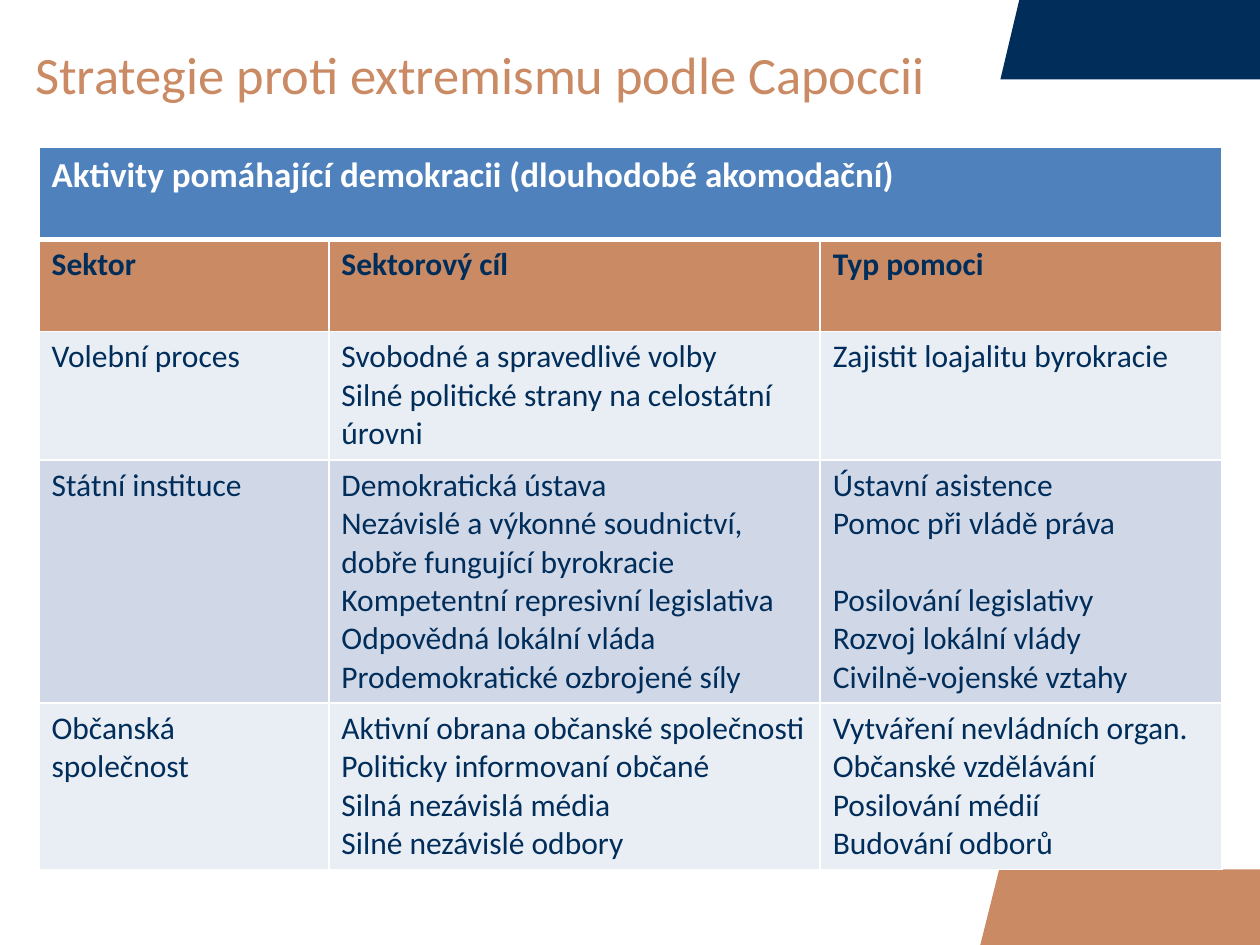
from lxml.etree import SubElement
from pptx import Presentation
from pptx.dml.color import RGBColor
from pptx.enum.text import MSO_ANCHOR
from pptx.oxml.ns import qn
from pptx.util import Inches, Pt

NAVY = RGBColor(0x00, 0x2D, 0x5A)
COPPER = RGBColor(0xCA, 0x8A, 0x64)
BLUE = RGBColor(0x4F, 0x81, 0xBD)
PALE = RGBColor(0xE9, 0xED, 0xF4)
GREY_BLUE = RGBColor(0xD0, 0xD8, 0xE8)
WHITE = RGBColor(0xFF, 0xFF, 0xFF)

FONT = "Calibri"
WIDTH, HEIGHT = 10, 7.5
SLANT = 0.15
BLANK_LINE = Pt(22)

HEADING = "Strategie proti extremismu podle Capoccii"
CORNERS = [(7.94, 0, 0.63, NAVY), (7.78, 6.9, 0.6, COPPER)]
COLUMN_WIDTHS = [2.3, 3.9, 3.19]
ROW_HEIGHTS = [0.73, 0.73, 1.02, 1.93, 1.32]
ROW_FILLS = [BLUE, COPPER, PALE, GREY_BLUE, PALE]
LINE_BEFORE_GAP = "Pomoc při vládě práva"
ACTIVITIES = [
    [["Aktivity pomáhající demokracii (dlouhodobé akomodační)"]],
    [["Sektor"], ["Sektorový cíl"], ["Typ pomoci"]],
    [
        ["Volební proces"],
        ["Svobodné a spravedlivé volby", "Silné politické strany na celostátní úrovni"],
        ["Zajistit loajalitu byrokracie"],
    ],
    [
        ["Státní instituce"],
        [
            "Demokratická ústava",
            "Nezávislé a výkonné soudnictví, dobře fungující byrokracie",
            "Kompetentní represivní legislativa",
            "Odpovědná lokální vláda",
            "Prodemokratické ozbrojené síly",
        ],
        [
            "Ústavní asistence",
            LINE_BEFORE_GAP,
            "Posilování legislativy",
            "Rozvoj lokální vlády",
            "Civilně-vojenské vztahy",
        ],
    ],
    [
        ["Občanská společnost"],
        [
            "Aktivní obrana občanské společnosti",
            "Politicky informovaní občané",
            "Silná nezávislá média",
            "Silné nezávislé odbory",
        ],
        [
            "Vytváření nevládních organ.",
            "Občanské vzdělávání",
            "Posilování médií",
            "Budování odborů",
        ],
    ],
]


def style(paragraph, size, color, bold=False):
    for run in paragraph.runs:
        run.font.name = FONT
        run.font.size = Pt(size)
        run.font.bold = bold
        run.font.color.rgb = color


def add_corner(slide, left, top, height, color):
    bottom = top + height
    outline = slide.shapes.build_freeform(Inches(left), Inches(bottom))
    points = [(left + SLANT, top), (WIDTH, top), (WIDTH, bottom)]
    outline.add_line_segments([(Inches(x), Inches(y)) for x, y in points])
    corner = outline.convert_to_shape()
    corner.shadow.inherit = False
    corner.fill.solid()
    corner.fill.fore_color.rgb = color
    corner.line.fill.background()


def add_heading(slide):
    heading = slide.shapes.add_textbox(0, 0, Inches(WIDTH), Inches(1.17))
    frame = heading.text_frame
    frame.word_wrap = True
    frame.vertical_anchor = MSO_ANCHOR.MIDDLE
    frame.margin_left = frame.margin_right = Inches(0.28)
    frame.text = HEADING
    style(frame.paragraphs[0], 30, COPPER)


def set_borders(cell, top, bottom):
    properties = cell._tc.get_or_add_tcPr()
    for side, width in (("L", 1), ("R", 1), ("T", top), ("B", bottom)):
        line = SubElement(properties, qn(f"a:ln{side}"), w=str(Pt(width)))
        fill = SubElement(line, qn("a:solidFill"))
        SubElement(fill, qn("a:srgbClr"), val=str(WHITE))


def add_activities(slide):
    table = slide.shapes.add_table(
        len(ROW_HEIGHTS), len(COLUMN_WIDTHS), Inches(0.31), Inches(1.17),
        Inches(sum(COLUMN_WIDTHS)), Inches(sum(ROW_HEIGHTS)),
    ).table
    for column, width in zip(table.columns, COLUMN_WIDTHS):
        column.width = Inches(width)
    for row, height in zip(table.rows, ROW_HEIGHTS):
        row.height = Inches(height)
    table.cell(0, 0).merge(table.cell(0, len(COLUMN_WIDTHS) - 1))

    for r, (row, color) in enumerate(zip(table.rows, ROW_FILLS)):
        for cell in row.cells:
            set_borders(cell, 3 if r == 1 else 1, 3 if r == 0 else 1)
            cell.fill.solid()
            cell.fill.fore_color.rgb = color
        for cell, lines in zip(row.cells, ACTIVITIES[r]):
            cell.text_frame.text = "\n".join(lines)
            for paragraph in cell.text_frame.paragraphs:
                style(paragraph, 20 if r == 0 else 18, WHITE if r == 0 else NAVY, r < 2)
                if paragraph.text == LINE_BEFORE_GAP:
                    paragraph.space_after = BLANK_LINE


def main():
    presentation = Presentation()
    presentation.slide_width = Inches(WIDTH)
    presentation.slide_height = Inches(HEIGHT)
    slide = presentation.slides.add_slide(presentation.slide_layouts[6])
    for corner in CORNERS:
        add_corner(slide, *corner)
    add_heading(slide)
    add_activities(slide)
    presentation.save("out.pptx")


if __name__ == "__main__":
    main()
